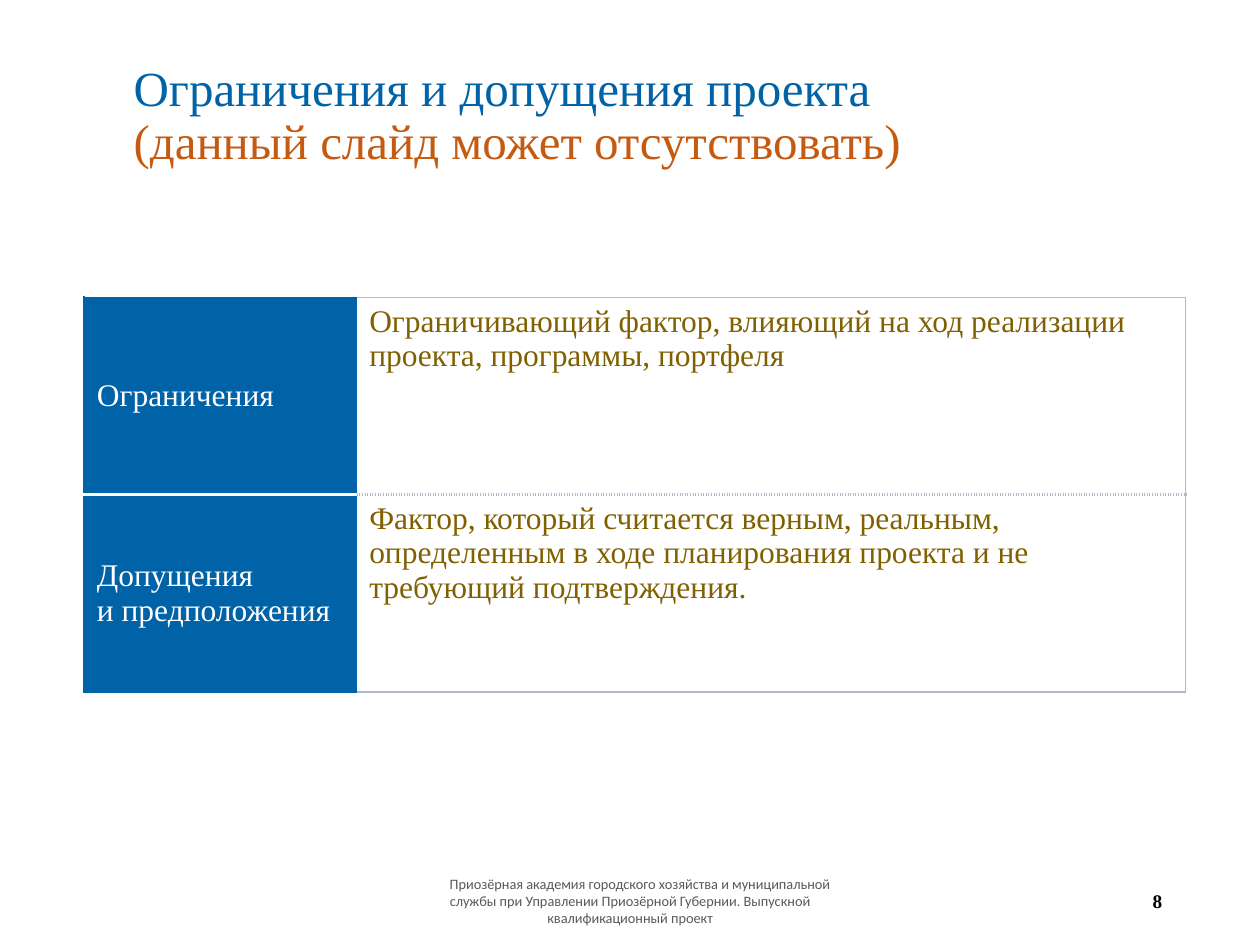
from lxml.etree import SubElement
from pptx import Presentation
from pptx.dml.color import RGBColor
from pptx.enum.text import MSO_ANCHOR, MSO_AUTO_SIZE, PP_ALIGN
from pptx.oxml.ns import qn
from pptx.util import Cm, Pt

BLUE, WHITE, ORANGE = "0062A7", "FFFFFF", "C55A11"
OLIVE, GREY, BLACK, RULE = "806000", "595959", "000000", "B0B9CB"
SERIF, SANS = "Times New Roman", "Calibri"


def colour(value):
    return RGBColor.from_string(value)


class PageBuilder:
    """Holds the text style and the current slide."""

    def __init__(self, page, font=SERIF):
        self.page = page
        self.font = font

    def add_lines(self, frame, lines, size, align=PP_ALIGN.LEFT,
                  font=None, bold=False, spacing=None):
        """Fill a text frame with one paragraph per (text, colour) pair."""
        frame.word_wrap = True
        frame.vertical_anchor = MSO_ANCHOR.MIDDLE
        for number, (text, text_colour) in enumerate(lines):
            para = frame.add_paragraph() if number else frame.paragraphs[0]
            para.alignment = align
            if spacing:
                para.line_spacing = spacing
            span = para.add_run()
            span.text = text
            span.font.name = font or self.font
            span.font.size = Pt(size)
            span.font.bold = bold
            span.font.color.rgb = colour(text_colour)

    def title(self, left, top, width, height, lines):
        box = self.page.shapes.title
        box.left, box.top, box.width, box.height = map(Cm, (left, top, width, height))
        box.text_frame.auto_size = MSO_AUTO_SIZE.NONE
        self.add_lines(box.text_frame, lines, 28, spacing=0.9)

    def text(self, left, top, width, height, lines, size, **style):
        box = self.page.shapes.add_textbox(*map(Cm, (left, top, width, height)))
        self.add_lines(box.text_frame, lines, size, **style)
        return box

    def borders(self, cell, sides):
        """Draw the given sides as (colour, points, dash); hide the others."""
        properties = cell._tc.get_or_add_tcPr()
        edges = []
        for side in ("L", "R", "T", "B"):
            edge = SubElement(properties, qn(f"a:ln{side}"))
            edges.append(edge)
            if side not in sides:
                SubElement(edge, qn("a:noFill"))
                continue
            line_colour, points, dash = sides[side]
            edge.set("w", str(Pt(points)))
            fill = SubElement(edge, qn("a:solidFill"))
            SubElement(fill, qn("a:srgbClr")).set("val", line_colour)
            SubElement(edge, qn("a:prstDash")).set("val", dash)
        # The schema wants borders ahead of the cell fill
        for position, edge in enumerate(edges):
            properties.insert(position, edge)

    def cell(self, cell, lines, text_colour, fill, anchor, sides):
        cell.fill.solid()
        cell.fill.fore_color.rgb = colour(fill)
        self.add_lines(cell.text_frame, [(line, text_colour) for line in lines], 18)
        cell.vertical_anchor = anchor
        self.borders(cell, sides)

    def factor_table(self, left, top, widths, heights, rows):
        table = self.page.shapes.add_table(
            len(rows), len(widths), Cm(left), Cm(top),
            Cm(sum(widths)), Cm(sum(heights))).table
        table.first_row = table.horz_banding = False
        for column, width in zip(table.columns, widths):
            column.width = Cm(width)
        for row, height in zip(table.rows, heights):
            row.height = Cm(height)

        blue, white = (BLUE, 1.5, "solid"), (WHITE, 1.5, "solid")
        thin, dotted = (RULE, 1, "solid"), (RULE, 1.5, "sysDot")
        for number, (heading, details) in enumerate(rows):
            first, last = number == 0, number == len(rows) - 1
            self.cell(table.cell(number, 0), heading, WHITE, BLUE, MSO_ANCHOR.MIDDLE,
                      {"L": blue, "T": blue if first else white,
                       "B": blue if last else white})
            self.cell(table.cell(number, 1), details, OLIVE, WHITE, MSO_ANCHOR.TOP,
                      {"R": thin, "T": thin if first else dotted,
                       "B": thin if last else dotted})


def main():
    deck = Presentation()
    deck.slide_width, deck.slide_height = Cm(25.4), Cm(19.05)
    builder = PageBuilder(deck.slides.add_slide(deck.slide_layouts[5]))

    # Title
    builder.title(2.44, 1.07, 18.64, 2.57, [
        ("Ограничения и допущения проекта", BLUE),
        ("(данный слайд может отсутствовать)", ORANGE),
    ])

    # Constraints and assumptions
    builder.factor_table(1.7, 6, (5.49, 16.71), (3.97, 3.98), [
        (["Ограничения"],
         ["Ограничивающий фактор, влияющий на ход реализации проекта, "
          "программы, портфеля"]),
        (["Допущения", "и предположения"],
         ["Фактор, который считается верным, реальным, определенным в ходе "
          "планирования проекта и не требующий подтверждения."]),
    ])

    # Footer with an indented first line, and page number
    footer = builder.text(8.41, 17.65, 8.59, 1.02, [
        ("Приозёрная академия городского хозяйства и муниципальной службы "
         "при Управлении Приозёрной Губернии. "
         "Выпускной квалификационный проект", GREY),
    ], 8.2, align=PP_ALIGN.CENTER, font=SANS)
    footer.text_frame.paragraphs[0]._p.get_or_add_pPr().set("indent", str(Cm(0.4)))
    builder.text(17.96, 17.65, 5.72, 1.02, [("8", BLACK)], 11,
                 align=PP_ALIGN.RIGHT, bold=True)

    deck.save("out.pptx")


if __name__ == "__main__":
    main()
